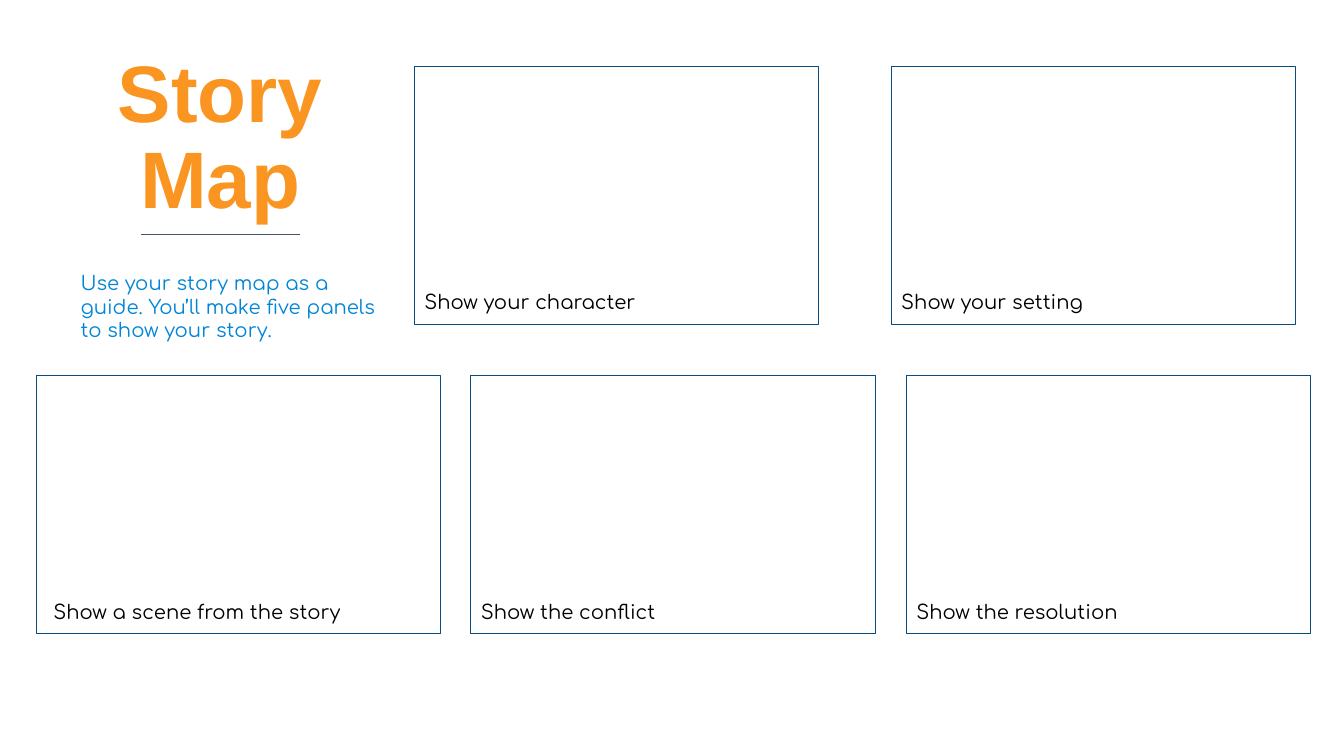
from lxml.etree import SubElement
from pptx import Presentation
from pptx.dml.color import RGBColor
from pptx.enum.shapes import MSO_CONNECTOR, MSO_SHAPE
from pptx.enum.text import MSO_ANCHOR, PP_ALIGN
from pptx.oxml.ns import qn
from pptx.util import Inches, Pt

PANEL_WIDTH, PANEL_HEIGHT = 4.01, 2.56
TOP_ROW, BOTTOM_ROW = 0.66, 3.73
CAPTION_HEIGHT = 0.44


def color(value):
    return RGBColor.from_string(value)


class StoryMap:
    body_font = "Comfortaa"
    title_font = "Arial"
    orange = "F99520"
    blue = "0285D6"
    navy = "094C80"
    slate = "44546A"
    white = "FFFFFF"
    black = "000000"

    def __init__(self, deck):
        self.slide = deck.slides.add_slide(deck.slide_layouts[6])

    def text_box(self, left, top, width, height, text, ink, vertical_inset=0.1):
        box = self.slide.shapes.add_textbox(
            Inches(left), Inches(top), Inches(width), Inches(height))
        frame = box.text_frame
        frame.word_wrap = True
        frame.margin_left = frame.margin_right = Inches(0.1)
        frame.margin_top = frame.margin_bottom = Inches(vertical_inset)
        frame.text = text
        for para in frame.paragraphs:
            for span in para.runs:
                span.font.name = self.body_font
                span.font.size = Pt(14)
                span.font.color.rgb = color(ink)
        return frame

    def title(self, left, top, width, height, text):
        frame = self.text_box(left, top, width, height, text, self.orange, 0.05)
        frame.vertical_anchor = MSO_ANCHOR.MIDDLE
        for para in frame.paragraphs:
            para.alignment = PP_ALIGN.CENTER
            para.line_spacing = 0.9
            for span in para.runs:
                span.font.name = self.title_font
                span.font.size = Pt(57.2)
                span.font.bold = True

    def panel(self, left, top):
        shape = self.slide.shapes.add_shape(
            MSO_SHAPE.RECTANGLE, Inches(left), Inches(top),
            Inches(PANEL_WIDTH), Inches(PANEL_HEIGHT))
        shape.shadow.inherit = False
        shape.fill.solid()
        shape.fill.fore_color.rgb = color(self.white)
        shape.line.color.rgb = color(self.navy)
        shape.line.width = Pt(0.75)

    def rule(self, left, right, top):
        line = self.slide.shapes.add_connector(
            MSO_CONNECTOR.STRAIGHT, Inches(left), Inches(top),
            Inches(right), Inches(top))
        line.line.color.rgb = color(self.slate)
        line.line.width = Pt(0.75)
        SubElement(line._element.spPr, qn("a:effectLst"))


def main():
    deck = Presentation()
    deck.slide_width, deck.slide_height = Inches(13.33), Inches(7.5)
    page = StoryMap(deck)
    page.title(0.99, 0.66, 2.39, 1.45, "Story\nMap")

    panels = [
        (4.11, TOP_ROW, 4.11, "Show your character"),
        (8.84, TOP_ROW, 8.84, "Show your setting"),
        (0.36, BOTTOM_ROW, 0.43, "Show a scene from the story"),
        (4.67, BOTTOM_ROW, 4.67, "Show the conflict"),
        (8.99, BOTTOM_ROW, 8.99, "Show the resolution"),
    ]
    for left, top, caption_left, caption in panels:
        page.panel(left, top)
        page.text_box(caption_left, top + PANEL_HEIGHT - CAPTION_HEIGHT,
                      PANEL_WIDTH, CAPTION_HEIGHT, caption, page.black)

    page.rule(1.4, 2.98, 2.33)
    page.text_box(0.7, 2.59, 3.19, 0.91,
                  "Use your story map as a guide. You’ll make five panels "
                  "to show your story.", page.blue)
    deck.save("out.pptx")


if __name__ == "__main__":
    main()
